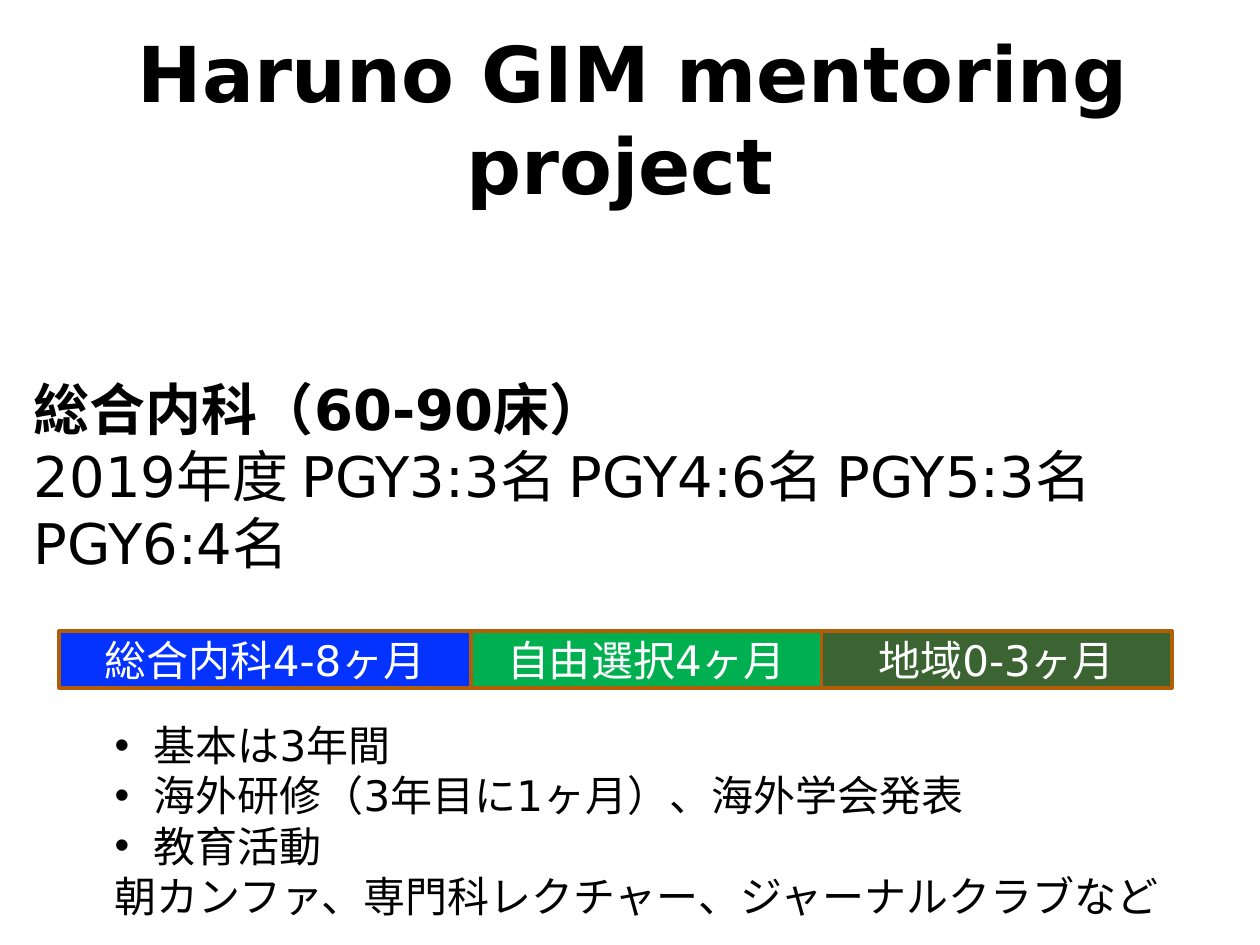
from dataclasses import dataclass

from lxml import etree
from pptx import Presentation
from pptx.dml.color import RGBColor
from pptx.enum.shapes import MSO_SHAPE
from pptx.enum.text import MSO_ANCHOR, MSO_AUTO_SIZE, PP_ALIGN
from pptx.oxml.ns import qn
from pptx.util import Inches, Pt

RECT = MSO_SHAPE.RECTANGLE
MIDDLE, TOP = MSO_ANCHOR.MIDDLE, MSO_ANCHOR.TOP
CENTER, LEFT = PP_ALIGN.CENTER, PP_ALIGN.LEFT
GROW, FIXED = MSO_AUTO_SIZE.SHAPE_TO_FIT_TEXT, MSO_AUTO_SIZE.NONE


@dataclass(frozen=True)
class Theme:
    font: str = "DejaVu Sans"
    ink: str = "000000"
    paper: str = "FFFFFF"
    edge: str = "B25E07"
    blue: str = "0432FF"
    green: str = "00B050"
    moss: str = "3B6432"
    title: int = 44
    staff: int = 32
    body: int = 24


THEME = Theme()
TITLE = " Haruno GIM mentoring project"
STAFF = ["総合内科（60-90床）", "2019年度 PGY3:3名 PGY4:6名 PGY5:3名 PGY6:4名"]
TERMS = [
    ("総合内科4-8ヶ月", 3.27, THEME.blue),
    ("自由選択4ヶ月", 2.78, THEME.green),
    ("地域0-3ヶ月", 2.78, THEME.moss),
]
NOTES = ["基本は3年間", "海外研修（3年目に1ヶ月）、海外学会発表", "教育活動"]
CLOSE = "朝カンファ、専門科レクチャー、ジャーナルクラブなど"


def place(shape, box):
    shape.left, shape.top, shape.width, shape.height = map(Inches, box)


def style(para, size, color=THEME.ink, bold=False, align=LEFT):
    para.alignment = align
    para.space_before = Pt(0)
    for run in para.runs:
        font = run.font
        font.name, font.size, font.bold = THEME.font, Pt(size), bold
        font.color.rgb = RGBColor.from_string(color)


def bullet(para, mark):
    props = para._p.get_or_add_pPr()
    indent = Inches(0.31) if mark else 0
    props.set("marL", str(indent))
    props.set("indent", str(-indent))
    if mark:
        etree.SubElement(props, qn("a:buFont")).set("typeface", "Arial")
        etree.SubElement(props, qn("a:buChar")).set("char", mark)
    else:
        etree.SubElement(props, qn("a:buNone"))


def add_title(slide, box):
    title = slide.shapes.title
    place(title, box)
    frame = title.text_frame
    frame.text = TITLE
    frame.vertical_anchor, frame.auto_size = MIDDLE, FIXED
    style(frame.paragraphs[0], THEME.title, bold=True, align=CENTER)


def add_staff(slide, box):
    frame = slide.shapes.add_textbox(*map(Inches, box)).text_frame
    frame.word_wrap, frame.auto_size = True, GROW
    frame.text = "\n".join(STAFF)
    head, count = frame.paragraphs
    style(head, THEME.staff, bold=True)
    style(count, THEME.staff)


def add_terms(slide, box):
    left, top, width, height = box
    scale = width / sum(term[1] for term in TERMS)
    for label, share, color in TERMS:
        span = share * scale
        bar = slide.shapes.add_shape(RECT, *map(Inches, (left, top, span, height)))
        bar.shadow.inherit = False
        bar.fill.solid()
        bar.fill.fore_color.rgb = RGBColor.from_string(color)
        bar.line.color.rgb = RGBColor.from_string(THEME.edge)
        bar.line.width = Pt(2)
        frame = bar.text_frame
        frame.text = label
        frame.vertical_anchor = MIDDLE
        style(frame.paragraphs[0], THEME.body, THEME.paper, align=CENTER)
        left += span


def add_notes(slide, box):
    body = slide.placeholders[1]
    place(body, box)
    frame = body.text_frame
    frame.vertical_anchor, frame.auto_size = TOP, GROW
    frame.text = "\n".join(NOTES + [CLOSE])
    for para in frame.paragraphs:
        style(para, THEME.body)
        bullet(para, "" if para.text == CLOSE else "•")


def main():
    deck = Presentation()
    deck.slide_width, deck.slide_height = Inches(10), Inches(7.5)
    slide = deck.slides.add_slide(deck.slide_layouts[1])
    add_title(slide, (0.67, -0.37, 8.5, 2.61))
    add_staff(slide, (0.17, 2.92, 9.91, 1.18))
    add_terms(slide, (0.47, 5.01, 8.83, 0.45))
    add_notes(slide, (0.81, 5.66, 9.1, 1.72))
    deck.save("out.pptx")


if __name__ == "__main__":
    main()
